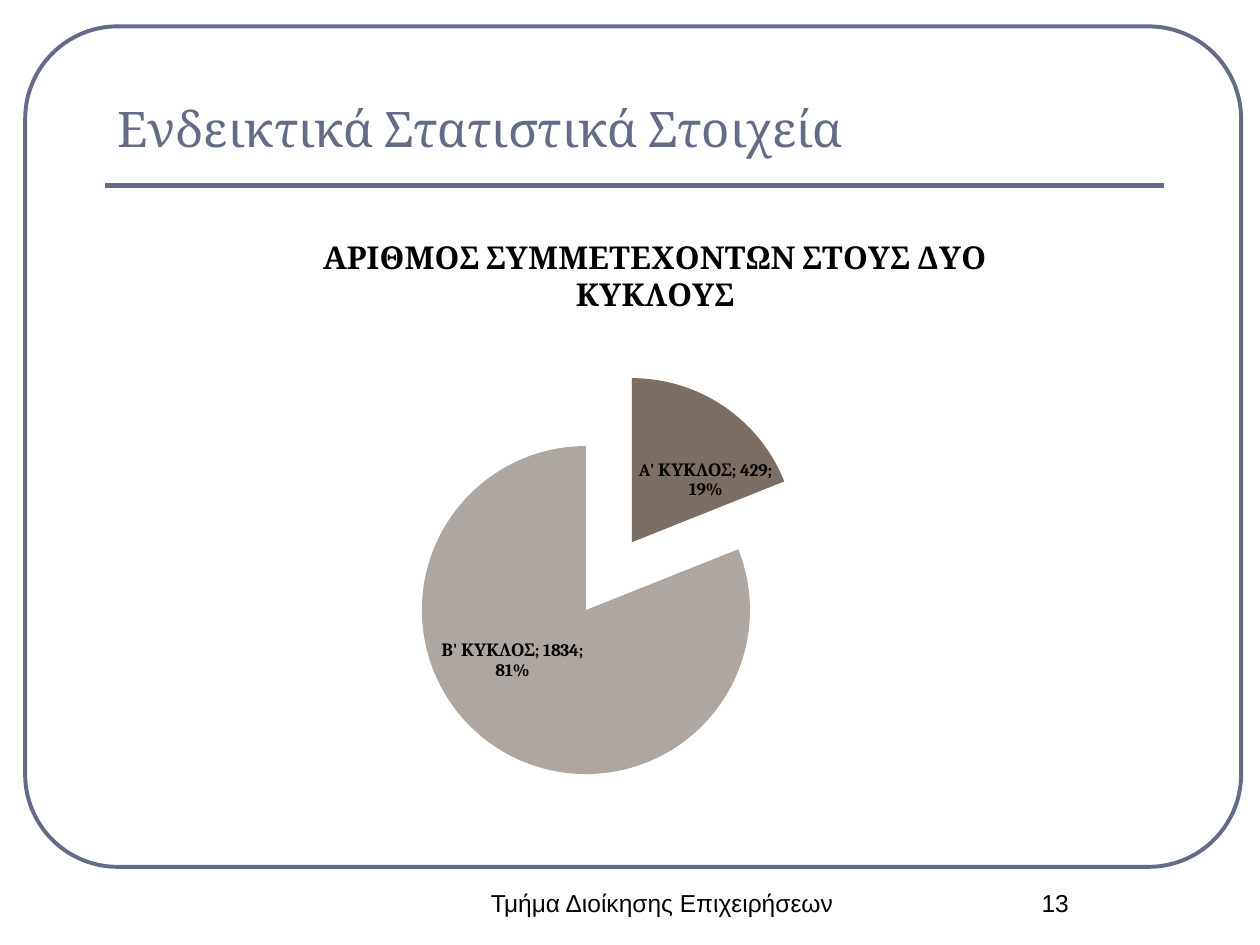
import copy

import pptx
import pptx.chart.data
import pptx.dml.color
import pptx.enum.chart
import pptx.enum.shapes
import pptx.enum.text
import pptx.oxml
import pptx.oxml.ns
import pptx.util
from pptx.util import Inches

COLORS = {"frame": "646B86", "text": "000000", "first": "7C6E62", "second": "AEA6A0"}
CHART_TITLE = "ΑΡΙΘΜΟΣ ΣΥΜΜΕΤΕΧΟΝΤΩΝ ΣΤΟΥΣ ΔΥΟ ΚΥΚΛΟΥΣ"
CYCLES = {"A' ΚΥΚΛΟΣ": 429, "Β' ΚΥΚΛΟΣ": 1834}
LABEL_OFFSETS = [(0.03, 0.01), (-0.03, -0.03)]


def color(name):
    return pptx.dml.color.RGBColor.from_string(COLORS[name])


def set_font(font, name, size, color_name, bold=False):
    font.name = name
    font.size = pptx.util.Pt(size)
    font.bold = bold
    font.color.rgb = color(color_name)


def chart_xml(tag, content="", attributes=""):
    namespace = pptx.oxml.ns.nsdecls("c")
    return pptx.oxml.parse_xml(f"<c:{tag} {namespace} {attributes}>{content}</c:{tag}>")


def manual_layout(prefix="", **fractions):
    values = "".join(f'<c:{key} val="{value}"/>' for key, value in fractions.items())
    return chart_xml("layout", f"<c:manualLayout>{prefix}{values}</c:manualLayout>")


def add_frame(slide, left, top, width, height):
    shapes = slide.shapes
    frame = shapes.add_shape(pptx.enum.shapes.MSO_SHAPE.ROUNDED_RECTANGLE,
                             left, top, width, height)
    frame.adjustments[0] = 0.11
    frame.shadow.inherit = False
    frame.fill.background()
    frame.line.color.rgb = color("frame")
    frame.line.width = pptx.util.Pt(2.25)

    rule_top = top + Inches(1.26)
    rule = shapes.add_connector(pptx.enum.shapes.MSO_CONNECTOR.STRAIGHT,
                                left + Inches(0.63), rule_top,
                                left + Inches(9.04), rule_top)
    rule.line.color.rgb = color("frame")
    rule.line.width = pptx.util.Pt(3)
    properties = rule._element.spPr
    properties.append(properties.makeelement(pptx.oxml.ns.qn("a:effectLst"), {}))


def add_title(slide, left, top, width, height):
    title = slide.shapes.title
    title.left, title.top, title.width, title.height = left, top, width, height
    title.text_frame.text = "Ενδεικτικά Στατιστικά Στοιχεία"
    title.text_frame.vertical_anchor = pptx.enum.text.MSO_ANCHOR.BOTTOM
    paragraph = title.text_frame.paragraphs[0]
    paragraph.alignment = pptx.enum.text.PP_ALIGN.LEFT
    set_font(paragraph.font, "Cambria", 28, "frame")


def add_footer_text(slide, text, left, top, width, height):
    text_frame = slide.shapes.add_textbox(left, top, width, height).text_frame
    text_frame.word_wrap = True
    text_frame.text = text
    paragraph = text_frame.paragraphs[0]
    paragraph.alignment = pptx.enum.text.PP_ALIGN.CENTER
    set_font(paragraph.font, "Arial", 14, "text")


def set_plot_layout(chart, **fractions):
    plot_area = chart._chartSpace.chart.plotArea
    for layout in plot_area.findall(pptx.oxml.ns.qn("c:layout")):
        plot_area.remove(layout)
    modes = '<c:layoutTarget val="inner"/><c:xMode val="edge"/><c:yMode val="edge"/>'
    plot_area.insert(0, manual_layout(modes, **fractions))


def explode(series, percent):
    first_point = series._element.find(pptx.oxml.ns.qn("c:dPt"))
    first_point.addprevious(chart_xml("explosion", attributes=f'val="{percent}"'))


def add_labels(series):
    labels = series.data_labels
    labels.show_category_name = labels.show_value = labels.show_percentage = True
    labels.position = pptx.enum.chart.XL_LABEL_POSITION.CENTER
    set_font(labels.font, "Cambria", 10, "text", True)
    element = labels._element
    element.find(pptx.oxml.ns.qn("c:showBubbleSize")).addnext(chart_xml("separator", "; "))

    leader_lines = pptx.oxml.ns.qn("c:showLeaderLines")
    settings = [child for child in element if child.tag != leader_lines]
    for index, (x, y) in enumerate(LABEL_OFFSETS):
        label = chart_xml("dLbl", f'<c:idx val="{index}"/>')
        label.append(manual_layout(x=x, y=y))
        label.extend(copy.deepcopy(settings))
        element.insert(index, label)


def add_pie(slide, left, top, width, height):
    chart_data = pptx.chart.data.CategoryChartData()
    chart_data.categories = list(CYCLES)
    chart_data.add_series(CHART_TITLE, list(CYCLES.values()))
    chart = slide.shapes.add_chart(pptx.enum.chart.XL_CHART_TYPE.PIE,
                                   left, top, width, height, chart_data).chart
    chart.has_legend = False
    set_font(chart.font, "Cambria", 10, "text")
    chart.has_title = True
    chart.chart_title.include_in_layout = False
    chart.chart_title.text_frame.text = CHART_TITLE
    set_font(chart.chart_title.text_frame.paragraphs[0].font, "Cambria", 18, "text", True)
    set_plot_layout(chart, x=0.22, y=0.27, w=0.46, h=0.7)

    plot = chart.plots[0]
    plot.vary_by_categories = True
    series = plot.series[0]
    for index, name in enumerate(("first", "second")):
        fill = series.points[index].format.fill
        fill.solid()
        fill.fore_color.rgb = color(name)
    explode(series, 25)
    add_labels(series)


def main():
    presentation = pptx.Presentation()
    presentation.slide_width, presentation.slide_height = Inches(10), Inches(7.5)
    slide = presentation.slides.add_slide(presentation.slide_layouts[5])
    add_frame(slide, Inches(0.2), Inches(0.21), Inches(9.65), Inches(6.67))
    add_title(slide, Inches(0.83), Inches(0.36), Inches(8.42), Inches(0.94))
    add_footer_text(slide, "Τμήμα Διοίκησης Επιχειρήσεων",
                    Inches(3.67), Inches(7), Inches(3.17), Inches(0.5))
    add_footer_text(slide, "13", Inches(7.5), Inches(7), Inches(1.75), Inches(0.5))
    add_pie(slide, Inches(1.54), Inches(1.69), Inches(7.32), Inches(4.65))
    presentation.save("out.pptx")


if __name__ == "__main__":
    main()
